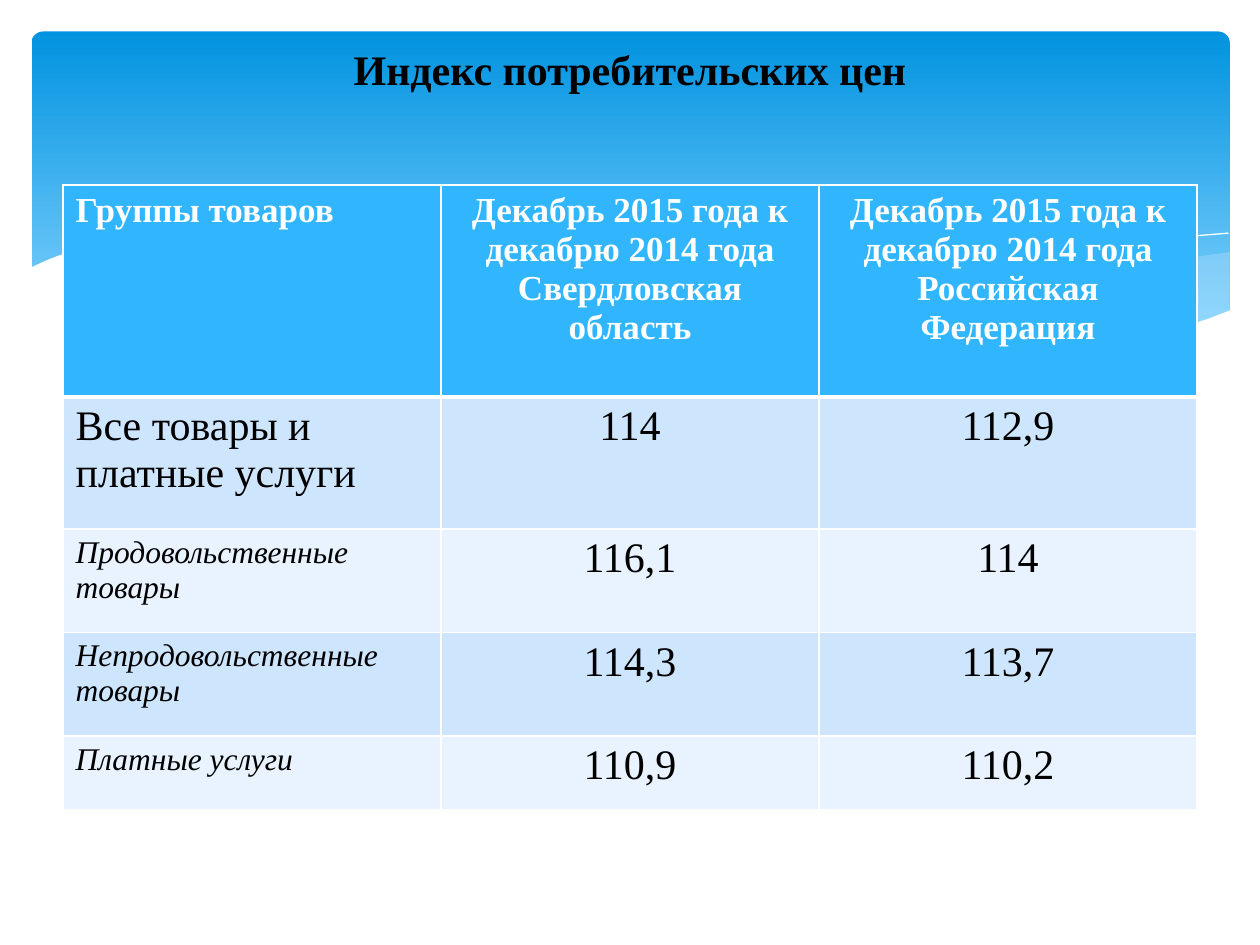
from lxml import etree
from pptx import Presentation
from pptx.dml.color import RGBColor
from pptx.enum import shapes, text
from pptx.oxml import ns
from pptx.util import Inches, Pt

FONT = "Times New Roman"


def rgb(value):
    return RGBColor.from_string(value)


def add_run(p, content, size, color, bold=False, italic=False):
    r = p.add_run()
    r.text = content
    f = r.font
    f.name, f.size, f.bold, f.italic = FONT, Pt(size), bold, italic
    f.color.rgb = rgb(color)


prs = Presentation()
prs.slide_width, prs.slide_height = Inches(10), Inches(7.5)
s = prs.slides.add_slide(prs.slide_layouts[6])

# Blue header panel
sp = s.shapes.add_shape(shapes.MSO_SHAPE.ROUNDED_RECTANGLE,
                        Inches(0.25), Inches(0.25), Inches(9.51), Inches(2.7))
sp.adjustments[0] = 0.034
sp.shadow.inherit = False
sp.line.fill.background()
sp.fill.gradient()
sp.fill.gradient_angle = 270
for stop, (color, position) in zip(sp.fill.gradient_stops, [("0293E0", 0), ("83D3FE", 0.9)]):
    stop.color.rgb = rgb(color)
    stop.position = position

# Waves: fill colour (None for a white line), opacity in percent, outline points
waves = [
    ("C6E7FC", 29, [
        (9.76, 2), (9.48, 2.04), (9.21, 2.1), (8.91, 2.16), (8.61, 2.23), (8.05, 2.37),
        (7.53, 2.48), (7.06, 2.57), (6.61, 2.65), (6.91, 2.69), (7.19, 2.72), (7.45, 2.75),
        (7.69, 2.77), (8.03, 2.78), (8.35, 2.77), (8.63, 2.75), (8.89, 2.72), (9.13, 2.67),
        (9.35, 2.62), (9.49, 2.57), (9.63, 2.52), (9.76, 2.47)]),
    ("C6E7FC", 40, [
        (8.93, 2.73), (8.66, 2.69), (8.07, 2.6), (7.41, 2.47), (6.68, 2.31), (6.29, 2.22),
        (5.84, 2.11), (5.41, 2.03), (5.02, 1.96), (4.65, 1.91), (4.2, 1.87), (3.8, 1.85),
        (3.44, 1.86), (3.13, 1.88), (2.86, 1.91), (3.23, 1.96), (3.62, 2.03), (4.04, 2.11),
        (4.49, 2.22), (4.91, 2.32), (5.3, 2.4), (5.84, 2.52), (6.34, 2.61), (6.8, 2.68),
        (7.22, 2.74), (7.61, 2.77), (7.96, 2.78), (8.38, 2.78), (8.67, 2.76)]),
    (None, 100, [
        (3.09, 1.95), (3.28, 1.92), (3.53, 1.89), (3.87, 1.87), (4.33, 1.87), (4.69, 1.89),
        (5.1, 1.92), (5.56, 1.97), (6.08, 2.04), (6.65, 2.13), (7.27, 2.26), (7.95, 2.41),
        (8.69, 2.61), (9.07, 2.72)]),
    (None, 100, [
        (6.13, 2.57), (6.53, 2.46), (6.95, 2.35), (7.48, 2.23), (8.06, 2.1), (8.66, 1.99),
        (8.95, 1.94), (9.24, 1.9), (9.51, 1.87), (9.75, 1.85)]),
    ("FFFFFF", 100, [
        (9.77, 2.46), (9.59, 2.53), (9.4, 2.59), (9.2, 2.65), (8.99, 2.69), (8.75, 2.73),
        (8.5, 2.75), (8.09, 2.77), (7.61, 2.75), (7.08, 2.7), (6.48, 2.62), (5.79, 2.5),
        (5.03, 2.33), (4.47, 2.2), (3.91, 2.07), (3.4, 1.97), (2.92, 1.9), (2.5, 1.86),
        (2.11, 1.84), (1.77, 1.84), (1.46, 1.85), (1.19, 1.87), (0.95, 1.91), (0.76, 1.95),
        (0.59, 1.99), (0.46, 2.03), (0.36, 2.07), (0.23, 2.13), (0.23, 3.29), (9.77, 3.29)]),
]
for color, opacity, points in waves:
    start, *rest = [(Inches(x), Inches(y)) for x, y in points]
    fb = s.shapes.build_freeform(*start)
    fb.add_line_segments(rest, close=color is not None)
    sp = fb.convert_to_shape()
    sp.shadow.inherit = False
    if color is None:
        sp.fill.background()
        sp.line.color.rgb = rgb("FFFFFF")
        sp.line.width = Pt(0)
        continue
    sp.line.fill.background()
    sp.fill.solid()
    sp.fill.fore_color.rgb = rgb(color)
    if opacity < 100:
        clr = sp.fill._xPr.find(".//" + ns.qn("a:srgbClr"))
        etree.SubElement(clr, ns.qn("a:alpha")).set("val", str(opacity * 1000))

# Price index table
rows = [
    ("Группы товаров", "Декабрь 2015 года к декабрю 2014 года Свердловская область",
     "Декабрь 2015 года к декабрю 2014 года Российская Федерация"),
    ("Все товары и платные услуги", "114", "112,9"),
    ("Продовольственные товары", "116,1", "114"),
    ("Непродовольственные товары", "114,3", "113,7"),
    ("Платные услуги", "110,9", "110,2"),
]
heights = [1.68, 1.05, 0.82, 0.82, 0.59]
table = s.shapes.add_table(len(rows), 3, Inches(0.5), Inches(1.47),
                           Inches(9), Inches(sum(heights))).table
for i, (row, height) in enumerate(zip(rows, heights)):
    table.rows[i].height = Inches(height)
    header = i == 0
    fill = "31B6FD" if header else ("E8F3FF", "CEE5FE")[i % 2]
    for j, content in enumerate(row):
        cell = table.cell(i, j)
        tcPr = cell._tc.get_or_add_tcPr()
        for side in "LRTB":
            thick = (header and side == "B") or (i == 1 and side == "T")
            ln = etree.SubElement(tcPr, ns.qn("a:ln" + side), w=str(Pt(3 if thick else 1)))
            solid = etree.SubElement(ln, ns.qn("a:solidFill"))
            etree.SubElement(solid, ns.qn("a:srgbClr"), val="FFFFFF")
        cell.fill.solid()
        cell.fill.fore_color.rgb = rgb(fill)
        p = cell.text_frame.paragraphs[0]
        if j > 0:
            p.alignment = text.PP_ALIGN.CENTER
        subgroup = i > 1 and j == 0
        size = 20 if header else 18 if subgroup else 24
        add_run(p, content, size, "FFFFFF" if header else "000000", header, subgroup)

# Title
tf = s.shapes.add_textbox(Inches(0.5), Inches(0.17), Inches(9), Inches(0.75)).text_frame
tf.word_wrap = True
tf.vertical_anchor = text.MSO_ANCHOR.MIDDLE
p = tf.paragraphs[0]
p.alignment = text.PP_ALIGN.CENTER
add_run(p, "Индекс потребительских цен", 24, "000000", bold=True)

prs.save("out.pptx")
